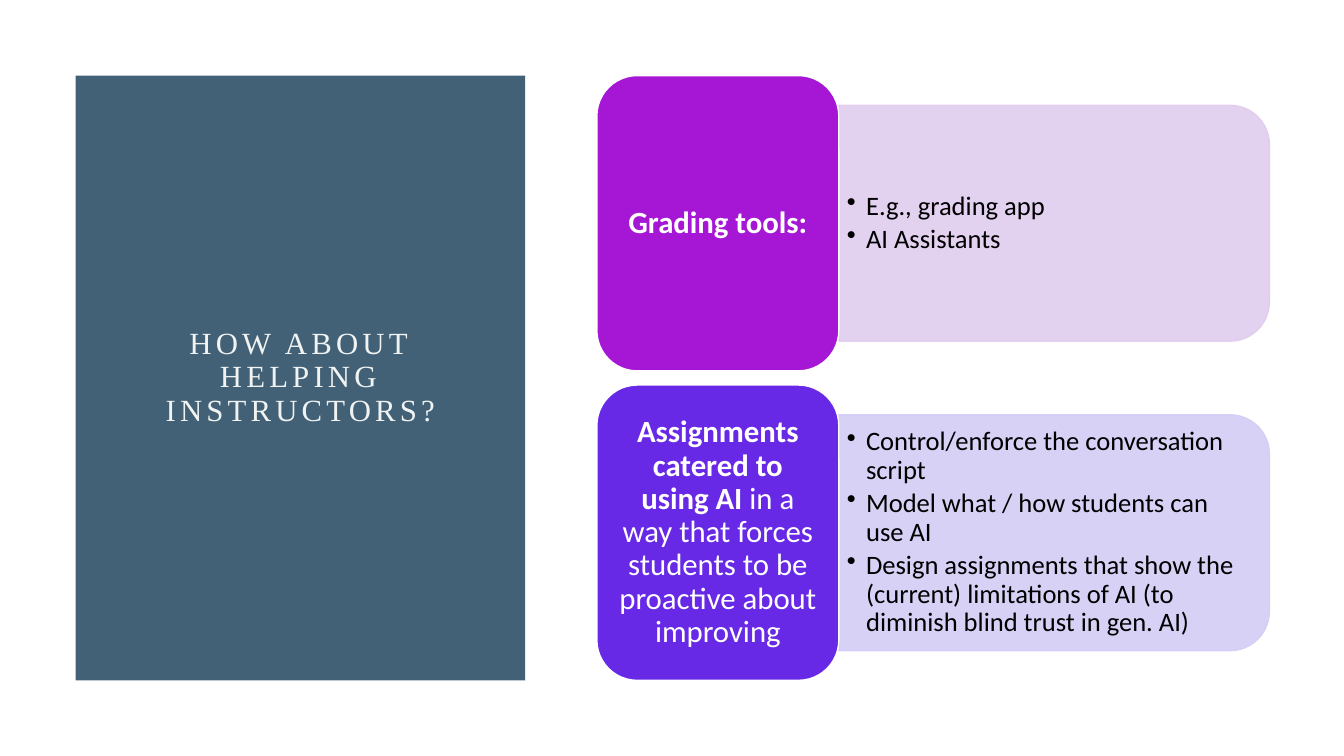
from lxml.etree import SubElement
from pptx import Presentation
from pptx.dml.color import RGBColor
from pptx.enum.shapes import MSO_SHAPE
from pptx.enum.text import MSO_ANCHOR, PP_ALIGN
from pptx.oxml.ns import qn
from pptx.util import Inches, Pt

SLATE = RGBColor(0x42, 0x61, 0x77)
MIST = RGBColor(0xF0, 0xF3, 0xF1)
PURPLE = RGBColor(0xA5, 0x17, 0xD5)
LILAC = RGBColor(0xE1, 0xCC, 0xEF)
VIOLET = RGBColor(0x68, 0x29, 0xE7)
LAVENDER = RGBColor(0xD4, 0xCD, 0xF6)
WHITE = RGBColor(0xFF, 0xFF, 0xFF)
BLACK = RGBColor(0, 0, 0)

TOP = 0.75
ROW_STEP = 3.07
CARD_LEFT, CARD_W, CARD_H = 5.92, 2.4, 2.93
PANEL_W, PANEL_H = 4.27, 2.34

# Each row: card colour, panel colour, card runs as (text, bold), bullets
ROWS = [
    (PURPLE, LILAC, [("Grading tools:", True)],
     ["E.g., grading app", "AI Assistants"]),
    (VIOLET, LAVENDER,
     [("Assignments catered to using AI ", True),
      ("in a way that forces students to be proactive about improving", False)],
     ["Control/enforce the conversation script",
      "Model what / how students can use AI",
      "Design assignments that show the (current) limitations of AI "
      "(to diminish blind trust in gen. AI)"]),
]


def add_box(slide, kind, left, top, width, height, fill, line=None):
    sp = slide.shapes.add_shape(kind, Inches(left), Inches(top),
                                Inches(width), Inches(height))
    sp.shadow.inherit = False
    sp.fill.solid()
    sp.fill.fore_color.rgb = fill
    if line is None:
        sp.line.fill.background()
    else:
        sp.line.color.rgb = line
        sp.line.width = Pt(1)
    return sp


def set_opacity(fill, percent):
    color = fill._xPr.find(qn("a:solidFill"))[0]
    SubElement(color, qn("a:alpha")).set("val", str(percent * 1000))


def set_frame(sp, inset_x, inset_y):
    tf = sp.text_frame
    tf.word_wrap = True
    tf.vertical_anchor = MSO_ANCHOR.MIDDLE
    tf.margin_left = tf.margin_right = Inches(inset_x)
    tf.margin_top = tf.margin_bottom = Inches(inset_y)
    return tf


def set_paragraph(p, align, after=0):
    p.alignment = align
    p.line_spacing = 0.9
    p.space_after = Pt(after)


def add_text(p, text, *, size, color, font="Calibri", bold=False, spacing=0):
    r = p.add_run()
    r.text = text
    r.font.size = Pt(size)
    r.font.name = font
    r.font.bold = bold
    r.font.color.rgb = color
    if spacing:
        r.font._element.set("spc", str(spacing * 100))


def set_bullet(p):
    pPr = p._p.get_or_add_pPr()
    pPr.set("marL", str(Inches(0.19)))
    pPr.set("indent", str(-Inches(0.19)))
    SubElement(pPr, qn("a:buChar")).set("char", "•")


def add_title(slide, text):
    sp = add_box(slide, MSO_SHAPE.RECTANGLE, 0.75, TOP, 4.46, 6, SLATE)
    p = set_frame(sp, 0.85, 0.8).paragraphs[0]
    set_paragraph(p, PP_ALIGN.CENTER)
    add_text(p, text, size=22, color=MIST, font="Times New Roman", spacing=3)


def add_panel(slide, top, color, bullets):
    """Draw the pale panel, turned so its round corners face right, and its list."""
    left = CARD_LEFT + CARD_W
    middle = top + CARD_H / 2
    sp = add_box(slide, MSO_SHAPE.ROUND_2_SAME_RECTANGLE,
                 left + (PANEL_W - PANEL_H) / 2, middle - PANEL_W / 2,
                 PANEL_H, PANEL_W, color, color)
    sp.rotation = 90
    set_opacity(sp.fill, 90)
    set_opacity(sp.line.fill, 90)

    box = slide.shapes.add_textbox(Inches(left), Inches(middle - 2.11 / 2),
                                   Inches(4.15), Inches(2.11))
    tf = set_frame(box, 0.08, 0.04)
    for i, bullet in enumerate(bullets):
        p = tf.add_paragraph() if i else tf.paragraphs[0]
        set_paragraph(p, PP_ALIGN.LEFT, after=3)
        set_bullet(p)
        add_text(p, bullet, size=19, color=BLACK)


def add_card(slide, top, color, runs):
    sp = add_box(slide, MSO_SHAPE.ROUNDED_RECTANGLE,
                 CARD_LEFT, top, CARD_W, CARD_H, color, WHITE)
    p = set_frame(sp, 0.09, 0.05).paragraphs[0]
    set_paragraph(p, PP_ALIGN.CENTER)
    for text, bold in runs:
        add_text(p, text, size=22, color=WHITE, bold=bold)


def main():
    prs = Presentation()
    prs.slide_width, prs.slide_height = Inches(13.33), Inches(7.5)
    slide = prs.slides.add_slide(prs.slide_layouts[6])
    add_title(slide, "HOW ABOUT HELPING INSTRUCTORS?")
    for i, (card_color, panel_color, runs, bullets) in enumerate(ROWS):
        top = TOP + i * ROW_STEP
        add_panel(slide, top, panel_color, bullets)
        add_card(slide, top, card_color, runs)
    prs.save("out.pptx")


if __name__ == "__main__":
    main()
